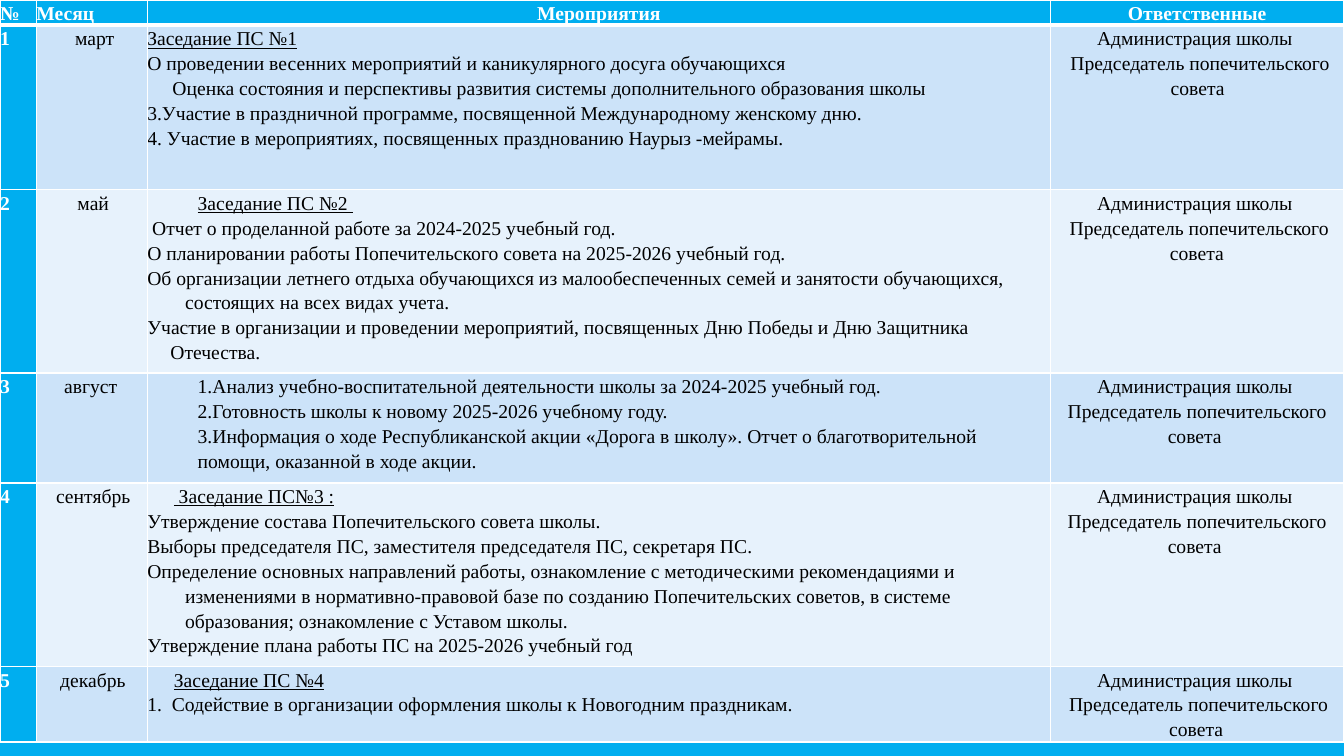
from dataclasses import dataclass
from lxml import etree
from pptx import Presentation
from pptx import util as u
from pptx.dml import color
from pptx.enum import text
from pptx.oxml import ns

LEFT, MID = text.PP_ALIGN.LEFT, text.PP_ALIGN.CENTER


@dataclass(frozen=True)
class Theme:
    font: str = "Times New Roman"
    size: float = 14
    lead: float = 1.15
    blue: str = "00AEEF"
    white: str = "FFFFFF"
    black: str = "000000"
    bands: tuple[str, str] = ("CCE3F9", "E7F2FC")
    thin: float = 1
    thick: float = 3


@dataclass(frozen=True)
class Line:
    text: str
    left: float = 0
    hang: float = 0
    under: bool = False


@dataclass(frozen=True)
class Row:
    month: Line
    tasks: list[Line]
    shift: float
    height: float


T = Theme()
COLS = [26, 79.2, 645.2, 209.6]
HEAD = [("№", LEFT), ("Месяц", LEFT), ("Мероприятия", MID), ("Ответственные", MID)]
TOP = 18


def item(words: str) -> Line:
    """Line whose wrapped part hangs to the right."""
    return Line(words, 27, -27)


ROWS = [
    Row(Line("март", 4), [
        Line("Заседание ПС №1", 27, -27, True),
        item("О проведении весенних мероприятий и каникулярного досуга обучающихся"),
        Line("Оценка состояния и перспективы развития системы дополнительного образования школы", 18),
        Line("3.Участие в праздничной программе, посвященной Международному женскому дню."),
        Line("4. Участие в мероприятиях, посвященных празднованию Наурыз -мейрамы."),
    ], 4, 117.5),
    Row(Line("май", 2), [
        Line("Заседание ПС №2 ", 36, under=True),
        item(" Отчет о проделанной работе за 2024-2025 учебный год."),
        item("О планировании работы Попечительского совета на 2025-2026 учебный год."),
        item("Об организации летнего отдыха обучающихся из малообеспеченных семей "
             "и занятости обучающихся, состоящих на всех видах учета."),
        item("Участие в организации и проведении мероприятий, посвященных "
             "Дню Победы и Дню Защитника"),
        Line("Отечества.", 16.5),
    ], 3, 131),
    Row(Line("август ", 2), [
        Line("1.Анализ учебно-воспитательной деятельности школы за 2024-2025 учебный год.", 36),
        Line("2.Готовность школы к новому 2025-2026 учебному году.", 36),
        Line("3.Информация о ходе Республиканской акции «Дорога в школу». "
             "Отчет о благотворительной помощи, оказанной в ходе акции.", 36),
    ], 0, 78.5),
    Row(Line("сентябрь", 2), [
        Line(" Заседание ПС№3 :", 19, under=True),
        item("Утверждение состава Попечительского совета школы."),
        item("Выборы председателя ПС, заместителя председателя ПС, секретаря ПС."),
        item("Определение основных направлений работы, ознакомление с методическими "
             "рекомендациями и изменениями в нормативно-правовой базе по созданию "
             "Попечительских советов, в системе образования; ознакомление с Уставом школы."),
        item("Утверждение плана работы ПС на 2025-2026 учебный год"),
    ], 0, 131),
    Row(Line("декабрь", 1.5), [
        Line("Заседание ПС №4", 19, under=True),
        Line("1.  Содействие в организации оформления школы к Новогодним праздникам."),
    ], 2, 54),
]


def rgb(code: str) -> color.RGBColor:
    return color.RGBColor.from_string(code)


def edge(cell, **widths: float) -> None:
    """Draw white cell borders; widths override the thin default by side."""
    props = cell._tc.get_or_add_tcPr()
    for spot, side in enumerate("LRTB"):
        width = u.Pt(widths.get(side, T.thin))
        line = etree.Element(ns.qn(f"a:ln{side}"), w=str(int(width)))
        fill = etree.SubElement(line, ns.qn("a:solidFill"))
        etree.SubElement(fill, ns.qn("a:srgbClr"), val=T.white)
        props.insert(spot, line)


def write(cell, lines: list[Line], fill: str, align=LEFT, head: bool = False) -> None:
    cell.margin_left = cell.margin_right = cell.margin_top = cell.margin_bottom = 0
    cell.fill.solid()
    cell.fill.fore_color.rgb = rgb(fill)
    frame = cell.text_frame
    for n, line in enumerate(lines):
        para = frame.add_paragraph() if n else frame.paragraphs[0]
        para.text = line.text
        para.alignment = align
        para.line_spacing = T.lead
        props = para._p.get_or_add_pPr()
        props.set("marL", str(int(u.Pt(line.left))))
        props.set("indent", str(int(u.Pt(line.hang))))
        font = para.font
        font.name, font.size = T.font, u.Pt(T.size)
        font.bold, font.underline = head, line.under
        font.color.rgb = rgb(T.white if head else T.black)


def main() -> None:
    deck = Presentation()
    deck.slide_width, deck.slide_height = u.Pt(960), u.Pt(540)
    slide = deck.slides.add_slide(deck.slide_layouts[6])
    slide.background.fill.solid()
    slide.background.fill.fore_color.rgb = rgb(T.blue)

    tall = [TOP] + [row.height for row in ROWS]
    grid = slide.shapes.add_table(len(tall), len(COLS), 0, 0,
                                  u.Pt(sum(COLS)), u.Pt(sum(tall))).table
    grid.horz_banding = False
    for col, width in zip(grid.columns, COLS):
        col.width = u.Pt(width)
    for band, height in zip(grid.rows, tall):
        band.height = u.Pt(height)

    for n, (name, align) in enumerate(HEAD):
        write(grid.cell(0, n), [Line(name)], T.blue, align, True)
        edge(grid.cell(0, n), B=T.thick)
    for n, row in enumerate(ROWS, 1):
        num, month, tasks, staff = cells = list(grid.rows[n].cells)
        fill = T.bands[(n - 1) % 2]
        write(num, [Line(str(n))], T.blue, head=True)
        write(month, [row.month], fill, MID)
        write(tasks, row.tasks, fill)
        write(staff, [Line("Администрация школы "),
                      Line("Председатель попечительского совета ", row.shift)], fill, MID)
        for cell in cells:
            edge(cell, T=T.thick if n == 1 else T.thin)

    deck.save("out.pptx")


if __name__ == "__main__":
    main()
